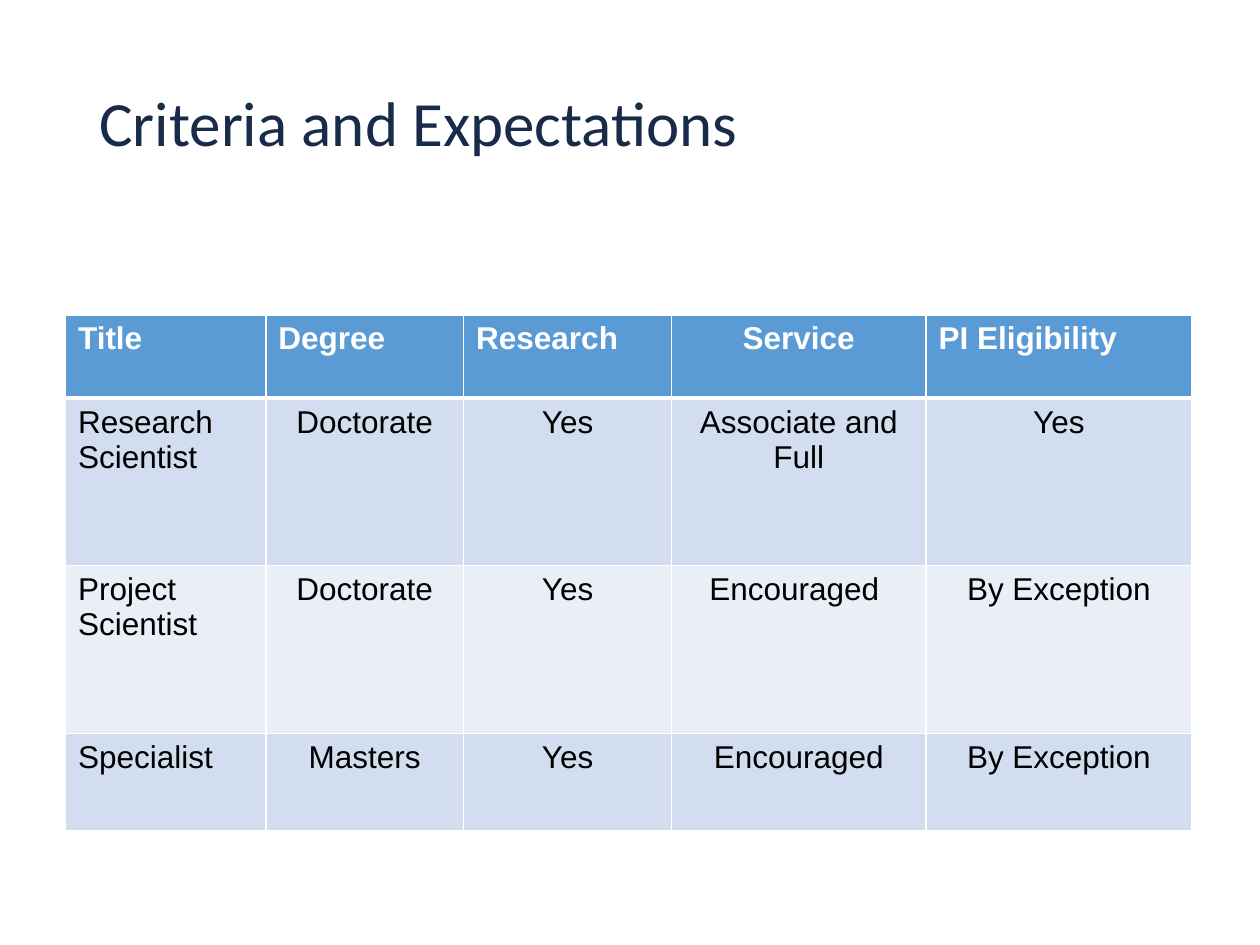
from dataclasses import dataclass

import pptx
import pptx.dml.color
import pptx.enum.text
import pptx.oxml
import pptx.oxml.ns
import pptx.slide
import pptx.table
import pptx.util

Inches = pptx.util.Inches
Pt = pptx.util.Pt
RGBColor = pptx.dml.color.RGBColor
PP_ALIGN = pptx.enum.text.PP_ALIGN

NAVY = RGBColor(0x18, 0x2B, 0x49)
BLUE = RGBColor(0x5B, 0x9B, 0xD5)
LIGHT_BLUE = RGBColor(0xD2, 0xDE, 0xEF)
PALE_BLUE = RGBColor(0xEA, 0xEF, 0xF7)
WHITE = RGBColor(0xFF, 0xFF, 0xFF)
BLACK = RGBColor(0x00, 0x00, 0x00)


@dataclass(frozen=True)
class RowStyle:
    fill: RGBColor
    color: RGBColor
    bold: bool
    top_border: int
    bottom_border: int


@dataclass(frozen=True)
class CriteriaRow:
    height: float
    labels: tuple[str, ...]
    style: RowStyle


HEADER = RowStyle(BLUE, WHITE, True, 1, 3)
FIRST_BAND = RowStyle(LIGHT_BLUE, BLACK, False, 3, 1)
PALE_BAND = RowStyle(PALE_BLUE, BLACK, False, 1, 1)
LIGHT_BAND = RowStyle(LIGHT_BLUE, BLACK, False, 1, 1)

COLUMN_WIDTHS = (1.59, 1.57, 1.65, 2.02, 2.11)
ROWS = (
    CriteriaRow(0.66, ("Title", "Degree", "Research", "Service", "PI Eligibility"), HEADER),
    CriteriaRow(1.33, ("Research Scientist", "Doctorate", "Yes", "Associate and Full", "Yes"), FIRST_BAND),
    CriteriaRow(1.33, ("Project Scientist", "Doctorate", "Yes", "Encouraged ", "By Exception"), PALE_BAND),
    CriteriaRow(0.77, ("Specialist", "Masters", "Yes", "Encouraged", "By Exception"), LIGHT_BAND),
)


def add_title(slide: pptx.slide.Slide, text: str) -> None:
    shape = slide.shapes.add_textbox(Inches(0.69), Inches(0.68), Inches(8.62), Inches(1.15))
    shape.text_frame.word_wrap = True
    paragraph = shape.text_frame.paragraphs[0]
    paragraph.line_spacing = 0.9
    run = paragraph.add_run()
    run.text = text
    run.font.name = "Calibri"
    run.font.size = Pt(36)
    run.font.color.rgb = NAVY


def add_border(cell: pptx.table._Cell, side: str, points: int) -> None:
    namespace = pptx.oxml.ns.nsdecls("a")
    line = pptx.oxml.parse_xml(
        f'<a:ln{side} {namespace} w="{Pt(points)}">'
        f'<a:solidFill><a:srgbClr val="{WHITE}"/></a:solidFill></a:ln{side}>'
    )
    cell._tc.get_or_add_tcPr().append(line)


def fill_cell(cell: pptx.table._Cell, text: str, style: RowStyle, centered: bool) -> None:
    borders = {"L": 1, "R": 1, "T": style.top_border, "B": style.bottom_border}
    for side, points in borders.items():
        add_border(cell, side, points)
    cell.fill.solid()
    cell.fill.fore_color.rgb = style.fill
    paragraph = cell.text_frame.paragraphs[0]
    paragraph.alignment = PP_ALIGN.CENTER if centered else PP_ALIGN.LEFT
    run = paragraph.add_run()
    run.text = text
    run.font.name = "Arial"
    run.font.size = Pt(18)
    run.font.bold = style.bold
    run.font.color.rgb = style.color


def add_criteria_table(slide: pptx.slide.Slide) -> None:
    height = sum(row.height for row in ROWS)
    table = slide.shapes.add_table(
        len(ROWS), len(COLUMN_WIDTHS),
        Inches(0.52), Inches(2.5), Inches(sum(COLUMN_WIDTHS)), Inches(height),
    ).table
    for column, width in zip(table.columns, COLUMN_WIDTHS):
        column.width = Inches(width)
    for row_index, row in enumerate(ROWS):
        table.rows[row_index].height = Inches(row.height)
        for column_index, label in enumerate(row.labels):
            centered = label == "Service" if row.style is HEADER else column_index > 0
            fill_cell(table.cell(row_index, column_index), label, row.style, centered)


def main() -> None:
    presentation = pptx.Presentation()
    presentation.slide_width = Inches(10)
    presentation.slide_height = Inches(7.5)
    slide = presentation.slides.add_slide(presentation.slide_layouts[6])
    add_title(slide, "Criteria and Expectations")
    add_criteria_table(slide)
    presentation.save("out.pptx")


if __name__ == "__main__":
    main()
